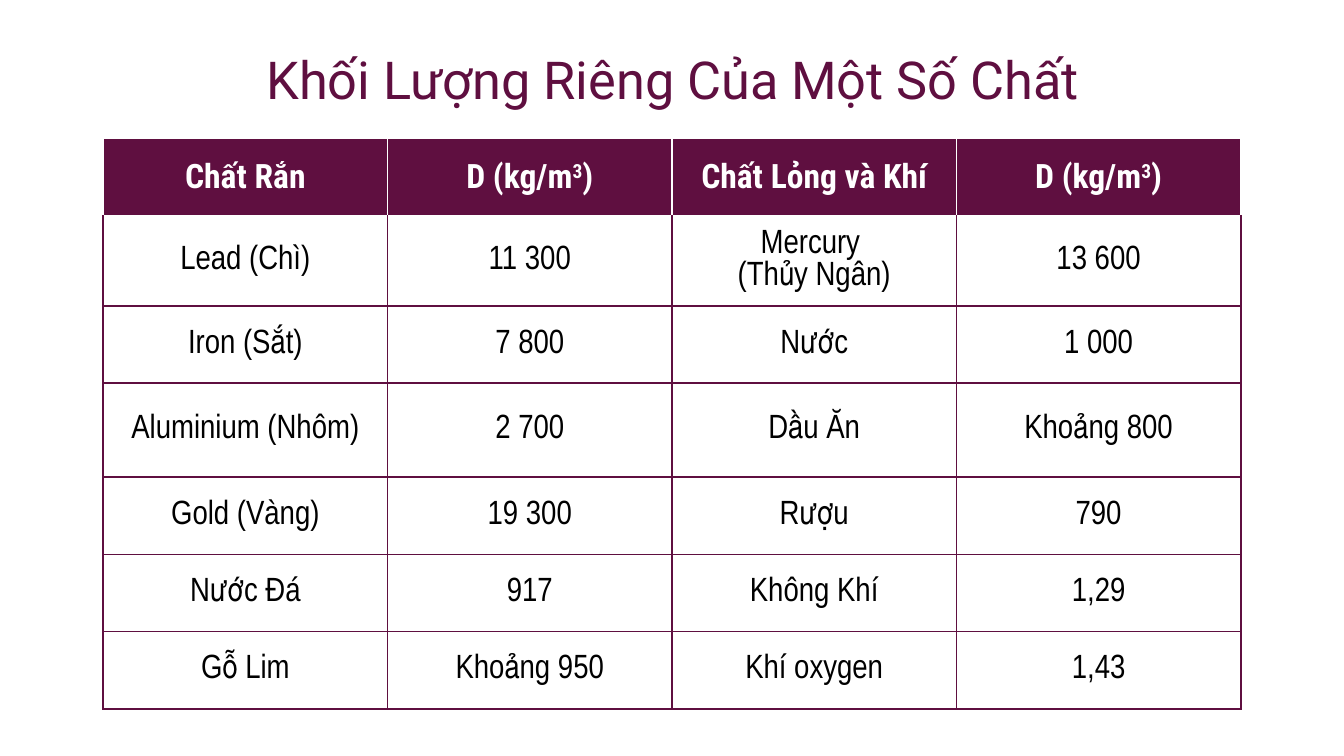
from dataclasses import dataclass

from lxml.etree import SubElement
from pptx import Presentation
from pptx.dml.color import RGBColor
from pptx.enum.text import MSO_ANCHOR, PP_ALIGN
from pptx.oxml.ns import qn
from pptx.util import Cm, Pt


@dataclass(frozen=True)
class Theme:
    plum: str = "5F0F40"
    white: str = "FFFFFF"
    black: str = "000000"
    title_font: str = "Roboto"
    header_font: str = "Roboto Condensed"
    body_font: str = "Arial Narrow"
    title_size: int = 28
    table_size: int = 18
    border: int = 1


THEME = Theme()
DENSITY = [("D (kg/m", False), ("3", True), (")", False)]
HEADERS = [
    [("Chất Rắn", False)],
    DENSITY,
    [("Chất Lỏng và Khí", False)],
    DENSITY,
]
SUBSTANCES = [
    ("Lead (Chì)", "11 300", "Mercury \n(Thủy Ngân)", "13 600"),
    ("Iron (Sắt)", "7 800", "Nước", "1 000"),
    ("Aluminium (Nhôm)", "2 700", "Dầu Ăn", "Khoảng 800"),
    ("Gold (Vàng)", "19 300", "Rượu", "790"),
    ("Nước Đá", "917", "Không Khí", "1,29"),
    ("Gỗ Lim", "Khoảng 950", "Khí oxygen", "1,43"),
]
ROW_HEIGHT = 1.46
TALL_ROWS = {1: 1.7, 3: 1.78}


def style_text(tf, font, size, color, bold=False):
    for p in tf.paragraphs:
        p.alignment = PP_ALIGN.CENTER
        for r in p.runs:
            r.font.name = font
            r.font.size = Pt(size)
            r.font.bold = bold
            r.font.color.rgb = RGBColor.from_string(color)


def set_borders(cell, color, top):
    tc_pr = cell._tc.get_or_add_tcPr()
    for side in ("L", "R", "T", "B"):
        ln = SubElement(tc_pr, qn(f"a:ln{side}"), w=str(Pt(THEME.border)))
        fill = SubElement(ln, qn("a:solidFill"))
        SubElement(fill, qn("a:srgbClr"), val=top if side == "T" else color)


def add_title(s, left, top, width, height):
    sp = s.shapes.add_textbox(Cm(left), Cm(top), Cm(width), Cm(height))
    tf = sp.text_frame
    tf.word_wrap = True
    tf.vertical_anchor = MSO_ANCHOR.BOTTOM
    tf.margin_left = tf.margin_right = Cm(0.25)
    tf.margin_top = tf.margin_bottom = Cm(0.25)
    tf.text = "Khối Lượng Riêng Của Một Số Chất"
    style_text(tf, THEME.title_font, THEME.title_size, THEME.plum)


def fill_header(cell, parts):
    p = cell.text_frame.paragraphs[0]
    for text, raised in parts:
        r = p.add_run()
        r.text = text
        if raised:
            r.font._element.set("baseline", "30000")
    style_text(cell.text_frame, THEME.header_font, THEME.table_size,
               THEME.white, bold=True)
    set_borders(cell, THEME.white, THEME.white)
    cell.fill.solid()
    cell.fill.fore_color.rgb = RGBColor.from_string(THEME.plum)


def fill_body(cell, text, top):
    cell.text_frame.text = text
    style_text(cell.text_frame, THEME.body_font, THEME.table_size, THEME.black)
    set_borders(cell, THEME.plum, top)
    cell.fill.background()


def add_density_table(s, left, top, width):
    heights = [TALL_ROWS.get(i, ROW_HEIGHT) for i in range(len(SUBSTANCES) + 1)]
    table = s.shapes.add_table(
        len(heights), len(HEADERS),
        Cm(left), Cm(top), Cm(width), Cm(sum(heights)),
    ).table
    for col in table.columns:
        col.width = Cm(width / len(HEADERS))
    for row, height in zip(table.rows, heights):
        row.height = Cm(height)
    for cell in table.iter_cells():
        cell.vertical_anchor = MSO_ANCHOR.MIDDLE
    for j, parts in enumerate(HEADERS):
        fill_header(table.cell(0, j), parts)
    for i, substances in enumerate(SUBSTANCES, start=1):
        for j, text in enumerate(substances):
            fill_body(table.cell(i, j), text,
                      THEME.white if i == 1 else THEME.plum)


def main():
    prs = Presentation()
    prs.slide_width, prs.slide_height = Cm(25.4), Cm(14.29)
    s = prs.slides.add_slide(prs.slide_layouts[6])
    add_density_table(s, 1.95, 2.62, 21.5)
    add_title(s, 4.34, 0.81, 16.74, 1.52)
    prs.save("out.pptx")


if __name__ == "__main__":
    main()
